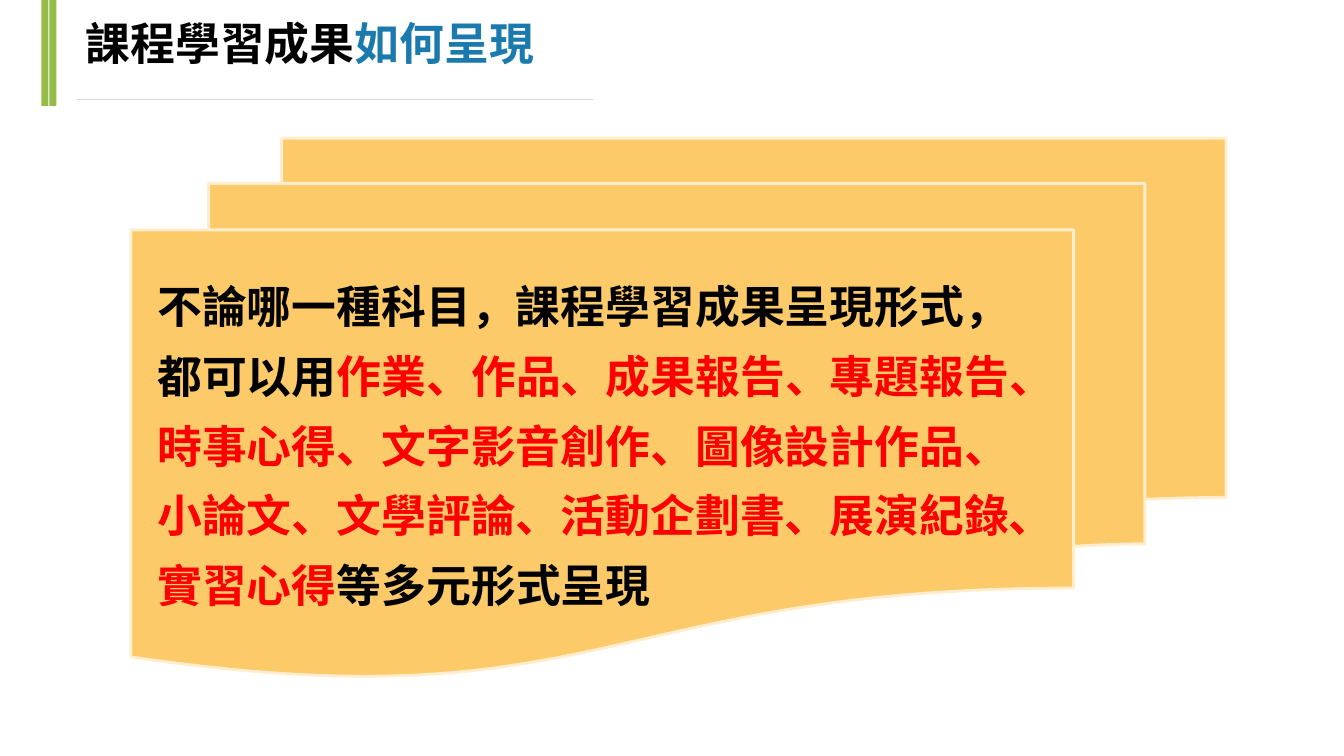
from lxml import etree
from pptx import Presentation
from pptx.dml.color import RGBColor
from pptx.enum import shapes, text
from pptx.oxml import ns
from pptx.util import Inches, Pt

BLACK = RGBColor(0, 0, 0)
RED = RGBColor(0xFF, 0, 0)
BLUE = RGBColor(0x1A, 0x7A, 0xAD)
GREEN = RGBColor(0x94, 0xBB, 0x48)
GREY = RGBColor(0xD9, 0xD9, 0xD9)
AMBER = RGBColor(0xFD, 0xCA, 0x6A)
CREAM = RGBColor(0xFF, 0xED, 0xCD)

prs = Presentation()
prs.slide_width, prs.slide_height = Inches(13.33), Inches(7.5)
slide = prs.slides.add_slide(prs.slide_layouts[6])


def add_lines(box, lines, typeface, line_spacing=None):
    """Add one paragraph of broken lines, each a list of (words, colour)."""
    left, top, width, height = (Inches(length) for length in box)
    frame = slide.shapes.add_textbox(left, top, width, height).text_frame
    frame.word_wrap = True
    frame.vertical_anchor = text.MSO_ANCHOR.TOP
    frame.margin_left = frame.margin_right = frame.margin_bottom = 0
    frame.margin_top = Inches(0.01)
    paragraph = frame.paragraphs[0]
    paragraph.space_before = Pt(1)
    paragraph.line_spacing = line_spacing
    for number, line in enumerate(lines):
        if number:
            paragraph.add_line_break()
        for words, colour in line:
            run = paragraph.add_run()
            run.text = words
            run.font.size = Pt(32)
            run.font.bold = True
            run.font.color.rgb = colour
            run.font.name = typeface
            east_asian = etree.SubElement(run.font._element, ns.qn("a:ea"))
            east_asian.set("typeface", typeface)


# Heading
for bar_left in (0.41, 0.49):
    bar = slide.shapes.add_shape(shapes.MSO_SHAPE.RECTANGLE, Inches(bar_left), 0,
                                 Inches(0.07), Inches(1.05))
    bar.shadow.inherit = False
    bar.fill.solid()
    bar.fill.fore_color.rgb = GREEN
    bar.line.fill.background()

rule = slide.shapes.add_connector(shapes.MSO_CONNECTOR.STRAIGHT, Inches(0.76),
                                  Inches(0.99), Inches(5.88), Inches(0.99))
rule.line.color.rgb = GREY
rule.line.width = Pt(0.72)
etree.SubElement(rule._element.spPr, ns.qn("a:effectLst"))

add_lines((0.85, 0.15, 4.6, 0.66),
          [[("課程學習成果", BLACK), ("如何呈現", BLUE)]], "Noto Sans CJK SC")

# Stack of documents
documents = slide.shapes.add_shape(shapes.MSO_SHAPE.FLOWCHART_MULTIDOCUMENT, Inches(1.3),
                                   Inches(1.37), Inches(10.86), Inches(5.35))
documents.shadow.inherit = False
documents.fill.solid()
documents.fill.fore_color.rgb = AMBER
documents.line.color.rgb = CREAM
documents.line.width = Pt(2.04)

presentation_forms = [
    [("不論哪一種科目，課程學習成果呈現形式，", BLACK)],
    [("都可以用", BLACK), ("作業、作品、成果報告、專題報告、", RED)],
    [("時事心得、文字影音創作、圖像設計作品、", RED)],
    [("小論文、文學評論、活動企劃書、展演紀錄、", RED)],
    [("實習心得", RED), ("等多元形式呈現", BLACK)],
]
add_lines((1.56, 2.6, 9.05, 3.5), presentation_forms, "Noto Sans CJK TC", Pt(49.8))

prs.save("out.pptx")
